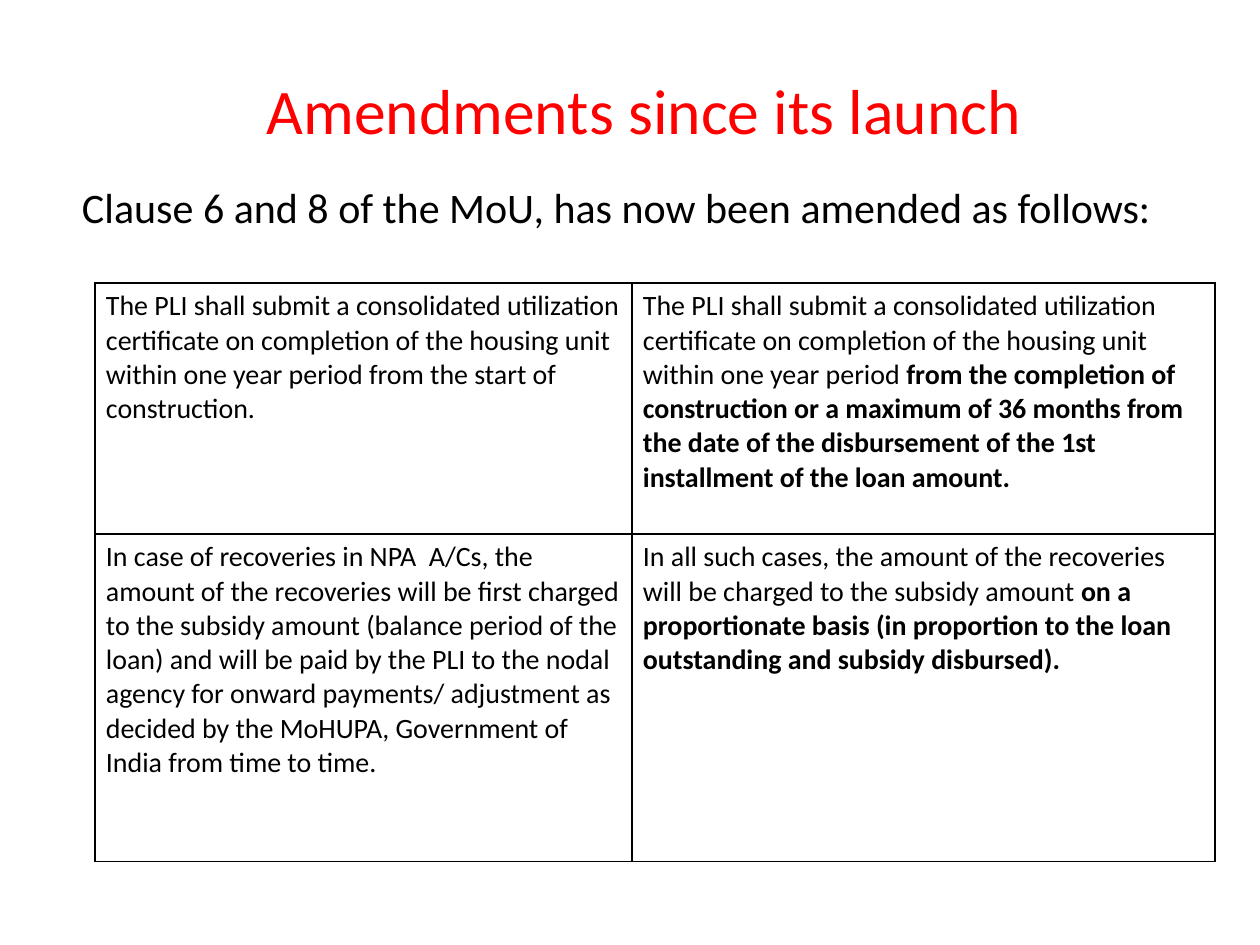
import pptx
import pptx.util
import pptx.dml.color
import pptx.enum.text
import pptx.oxml
import pptx.oxml.ns

PX = 914400 // 126
RED = pptx.dml.color.RGBColor(0xFF, 0x00, 0x00)
BLACK = pptx.dml.color.RGBColor(0x00, 0x00, 0x00)
FONT = "Calibri"
INSET = 11

TITLE = "Amendments since its launch"
INTRO = "Clause 6 and 8 of the MoU, has now been amended as follows:"

# Each cell: (regular text, bold text)
CLAUSES = [
    [
        ("The PLI shall submit a consolidated utilization certificate on completion of "
         "the housing unit within one year period from the start of construction.", ""),
        ("The PLI shall submit a consolidated utilization certificate on completion of "
         "the housing unit within one year period ",
         "from the completion of construction or a maximum of 36 months from the date of "
         "the disbursement of the 1st installment of the loan amount."),
    ],
    [
        ("In case of recoveries in NPA  A/Cs, the amount of the recoveries will be first "
         "charged to the subsidy amount (balance period of the loan) and will be paid by "
         "the PLI to the nodal agency for onward payments/ adjustment as decided by the "
         "MoHUPA, Government of India from time to time.", ""),
        ("In all such cases, the amount of the recoveries will be charged to the subsidy "
         "amount ",
         "on a proportionate basis (in proportion to the loan outstanding and subsidy "
         "disbursed)."),
    ],
]
COLUMN_WIDTHS = [537, 583]
ROW_HEIGHTS = [251, 328]


def px(length):
    return pptx.util.Emu(length * PX)


def set_font(paragraph, size, color):
    paragraph.font.name = FONT
    paragraph.font.size = pptx.util.Pt(size)
    paragraph.font.color.rgb = color


def fill_placeholder(shape, text, box, size, color, alignment):
    shape.left, shape.top, shape.width, shape.height = map(px, box)
    frame = shape.text_frame
    frame.text = text
    frame.word_wrap = True
    frame.auto_size = pptx.enum.text.MSO_AUTO_SIZE.NONE
    frame.vertical_anchor = pptx.enum.text.MSO_ANCHOR.TOP
    frame.margin_left = frame.margin_right = px(INSET)
    frame.margin_top = frame.margin_bottom = px(INSET)
    paragraph = frame.paragraphs[0]
    paragraph.alignment = alignment
    paragraph.space_before = pptx.util.Pt(0)
    properties = paragraph._p.get_or_add_pPr()
    properties.set("marL", str(px(5)))
    properties.set("indent", "0")
    properties.append(pptx.oxml.parse_xml(
        f'<a:buNone {pptx.oxml.ns.nsdecls("a")}/>'))
    set_font(paragraph, size, color)


def add_borders(cell):
    properties = cell._tc.get_or_add_tcPr()
    for side in ("lnL", "lnR", "lnT", "lnB"):
        properties.append(pptx.oxml.parse_xml(
            f'<a:{side} {pptx.oxml.ns.nsdecls("a")} w="9525"><a:solidFill>'
            f'<a:srgbClr val="{BLACK}"/></a:solidFill></a:{side}>'))


presentation = pptx.Presentation()
presentation.slide_width = px(1260)
presentation.slide_height = px(945)
slide = presentation.slides.add_slide(presentation.slide_layouts[1])

# Title and introduction
fill_placeholder(slide.shapes.title, TITLE, (66, 60, 1152, 100), 36.3, RED,
                 pptx.enum.text.PP_ALIGN.CENTER)
fill_placeholder(slide.placeholders[1], INTRO, (66, 170, 1152, 80), 24, BLACK,
                 pptx.enum.text.PP_ALIGN.LEFT)

# Table of old and amended clauses
table = slide.shapes.add_table(
    len(ROW_HEIGHTS), len(COLUMN_WIDTHS), px(95), px(283),
    px(sum(COLUMN_WIDTHS)), px(sum(ROW_HEIGHTS))).table
table.first_row = False
table.horz_banding = False
for column, width in zip(table.columns, COLUMN_WIDTHS):
    column.width = px(width)
for row, height, clauses in zip(table.rows, ROW_HEIGHTS, CLAUSES):
    row.height = px(height)
    for cell, (regular, bold) in zip(row.cells, clauses):
        cell.margin_left = cell.margin_right = px(INSET)
        add_borders(cell)
        cell.fill.background()
        paragraph = cell.text_frame.paragraphs[0]
        paragraph.add_run().text = regular
        if bold:
            run = paragraph.add_run()
            run.text = bold
            run.font.bold = True
        set_font(paragraph, 16, BLACK)

presentation.save("out.pptx")
